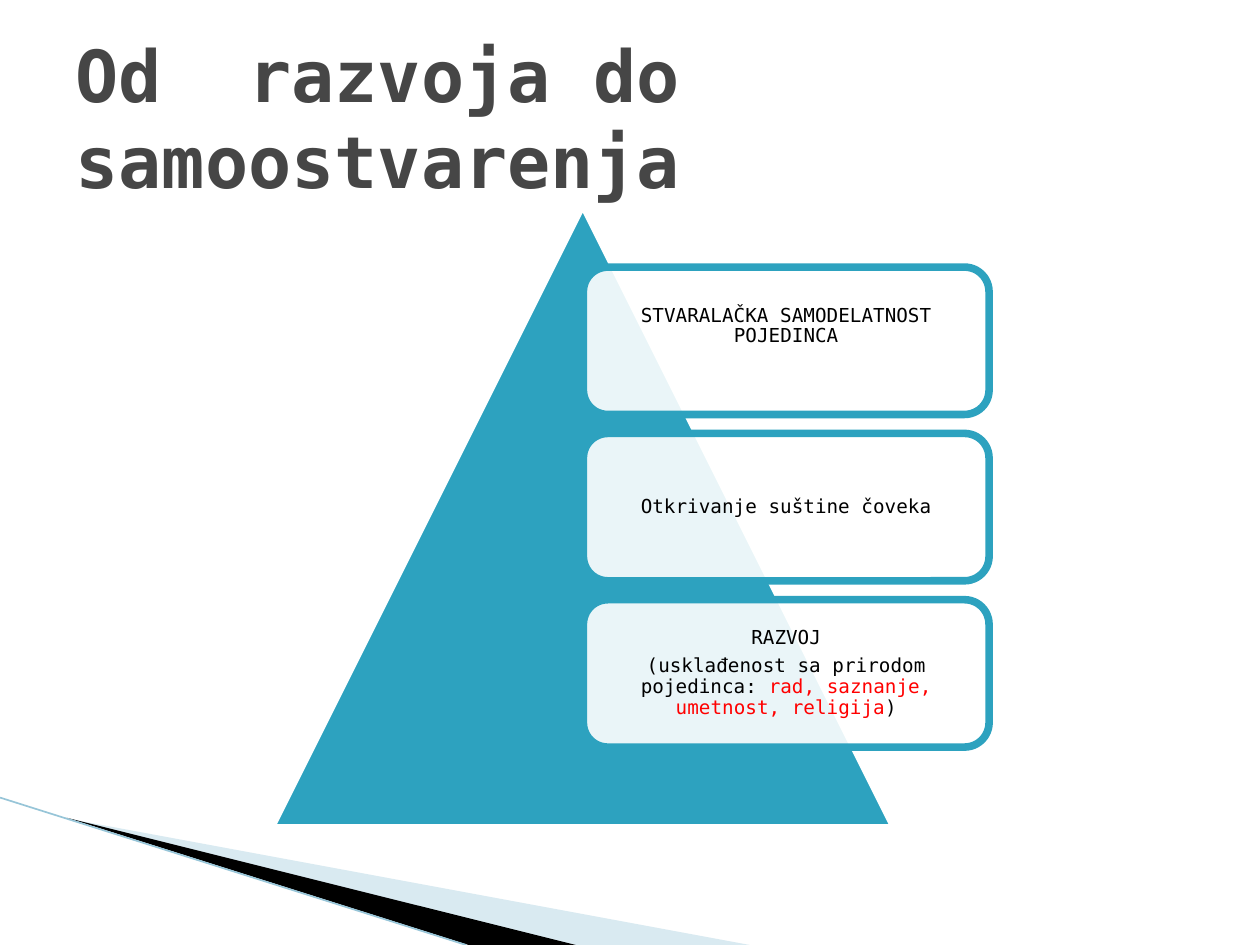
import pptx
import pptx.dml.color
import pptx.enum.shapes
import pptx.enum.text
import pptx.oxml
import pptx.oxml.ns
import pptx.util
from dataclasses import dataclass
from lxml import etree

Inches = pptx.util.Inches
Pt = pptx.util.Pt
RGB = pptx.dml.color.RGBColor.from_string
Shape = pptx.enum.shapes.MSO_SHAPE
Align = pptx.enum.text.PP_ALIGN
Anchor = pptx.enum.text.MSO_ANCHOR
qn = pptx.oxml.ns.qn


@dataclass(frozen=True)
class Theme:
    font: str = "DejaVu Sans Mono"
    title_size: float = 41
    body_size: float = 11
    outline: float = 4.33
    hairline: float = 0.95
    title: str = "464646"
    text: str = "000000"
    highlight: str = "FF0000"
    accent: str = "2DA2BF"
    paper: str = "FFFFFF"
    wedge: str = "A0CBDC"
    dark: str = "000000"
    edge: str = "97C5D8"


def apply(target, values):
    for name, value in values.items():
        setattr(target, name, value)


class SlideBuilder:
    def __init__(self, prs, theme):
        self.theme = theme
        self.s = prs.slides.add_slide(prs.slide_layouts[5])

    def paint(self, sp, color, alpha=None, line=None):
        sp.shadow.inherit = False
        sp.fill.solid()
        sp.fill.fore_color.rgb = RGB(color)
        if alpha is not None:
            clr = sp.fill._xPr.find(".//" + qn("a:srgbClr"))
            etree.SubElement(clr, qn("a:alpha"), val=str(alpha * 1000))
        if line:
            sp.line.color.rgb = RGB(line)
            sp.line.width = Pt(self.theme.outline)
        else:
            sp.line.fill.background()

    def run(self, p, text, size, color, bold=False):
        r = p.add_run()
        r.text = text
        apply(r.font, {"name": self.theme.font, "size": Pt(size), "bold": bold})
        r.font.color.rgb = RGB(color)

    def title(self, text, left, top, width, height):
        sp = self.s.shapes.title
        apply(sp, {"left": Inches(left), "top": Inches(top),
                   "width": Inches(width), "height": Inches(height)})
        tf = sp.text_frame
        apply(tf, {"word_wrap": True, "vertical_anchor": Anchor.MIDDLE,
                   "auto_size": pptx.enum.text.MSO_AUTO_SIZE.NONE})
        p = tf.paragraphs[0]
        p.alignment = Align.LEFT
        self.run(p, text, self.theme.title_size, self.theme.title, True)

    def polygon(self, points, color, alpha=None):
        start, *rest = [(Inches(x), Inches(y)) for x, y in points]
        builder = self.s.shapes.build_freeform(*start)
        builder.add_line_segments(rest, close=True)
        self.paint(builder.convert_to_shape(), color, alpha)

    def line(self, x1, y1, x2, y2, color):
        sp = self.s.shapes.add_connector(
            pptx.enum.shapes.MSO_CONNECTOR.STRAIGHT,
            Inches(x1), Inches(y1), Inches(x2), Inches(y2))
        sp.line.color.rgb = RGB(color)
        sp.line.width = Pt(self.theme.hairline)
        etree.SubElement(sp._element.spPr, qn("a:effectLst"))

    def shape(self, kind, left, top, width, height, color, alpha=None, line=None):
        sp = self.s.shapes.add_shape(
            kind, Inches(left), Inches(top), Inches(width), Inches(height))
        self.paint(sp, color, alpha, line)
        return sp

    def card(self, paragraphs, left, top, width, height, bottom=0.05):
        theme = self.theme
        sp = self.shape(Shape.ROUNDED_RECTANGLE, left, top, width, height,
                        theme.paper, 90, theme.accent)
        tf = sp.text_frame
        apply(tf, {"word_wrap": True, "vertical_anchor": Anchor.MIDDLE,
                   "margin_left": Inches(0.05), "margin_right": Inches(0.05),
                   "margin_top": Inches(0.05), "margin_bottom": Inches(bottom)})
        for i, runs in enumerate(paragraphs):
            p = tf.add_paragraph() if i else tf.paragraphs[0]
            apply(p, {"alignment": Align.CENTER, "line_spacing": 0.9,
                      "space_after": Pt(4)})
            for text, color in runs:
                self.run(p, text, theme.body_size, color)


def main():
    prs = pptx.Presentation()
    apply(prs, {"slide_width": Inches(10), "slide_height": Inches(7.5)})
    theme = Theme()
    slide = SlideBuilder(prs, theme)

    slide.polygon([(0.55, 6.5), (5.95, 7.5), (4.56, 7.5)], theme.wedge, 40)
    slide.polygon([(0.53, 6.49), (4.57, 7.5), (3.72, 7.5)], theme.dark)
    slide.line(0, 6.33, 3.7, 7.5, theme.edge)
    slide.title("Od  razvoja do samoostvarenja", 0.5, 0.3, 9, 1.25)
    slide.shape(Shape.ISOSCELES_TRIANGLE, 2.15, 1.62, 4.95, 4.95,
                theme.accent, line=theme.paper)

    cards = [
        ([[("STVARALAČKA SAMODELATNOST POJEDINCA", theme.text)]], 0.28),
        ([[("Otkrivanje suštine čoveka", theme.text)]], 0.05),
        ([[("RAZVOJ", theme.text)],
          [("(usklađenost sa prirodom pojedinca: ", theme.text),
           ("rad, saznanje, umetnost, religija", theme.highlight),
           (")", theme.text)]], 0.05),
    ]
    top, pitch = 2.12, 1.32
    for i, (paragraphs, bottom) in enumerate(cards):
        slide.card(paragraphs, 4.63, top + i * pitch, 3.22, 1.17, bottom)

    prs.save("out.pptx")


if __name__ == "__main__":
    main()
